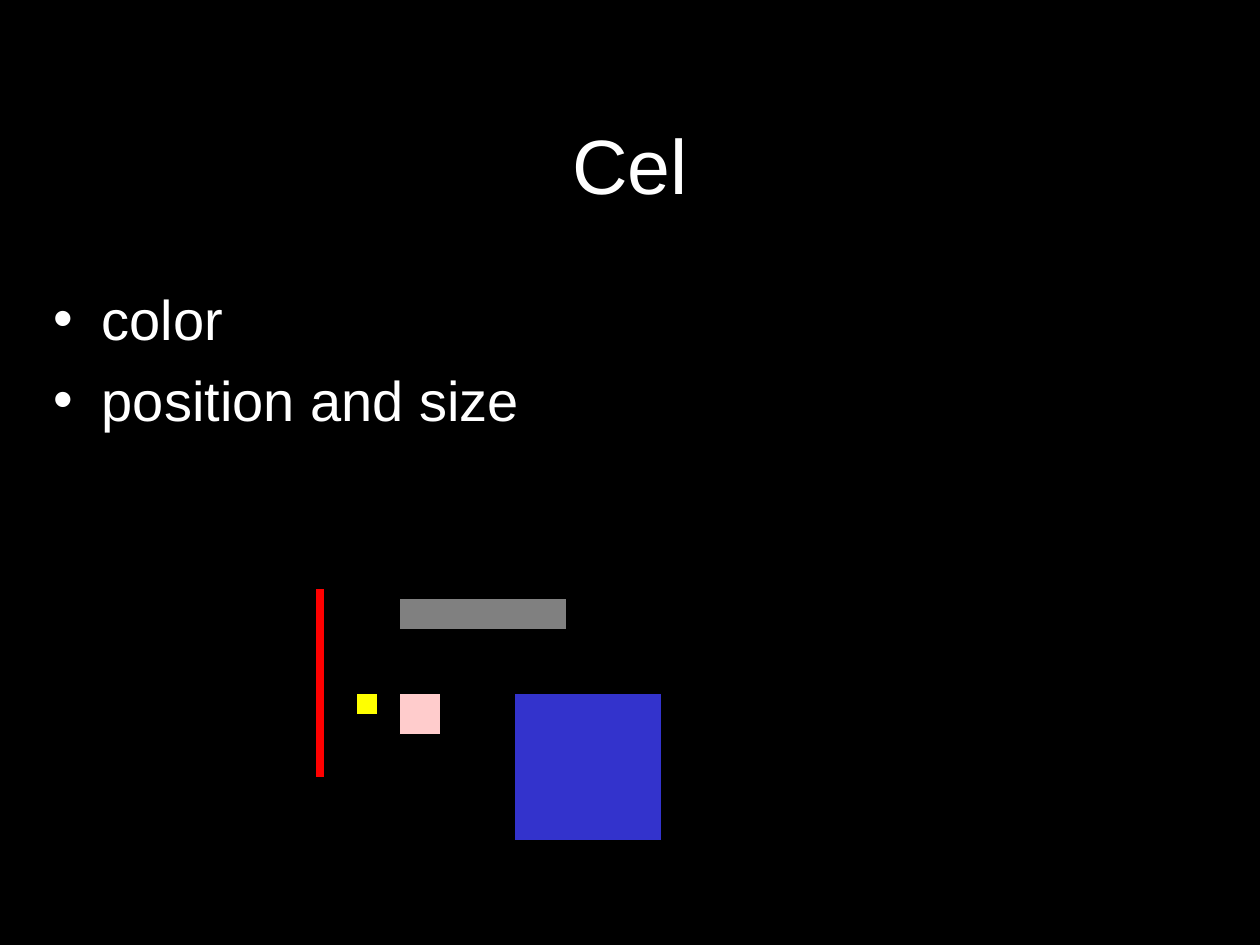
from dataclasses import dataclass

from lxml import etree
from pptx import Presentation
from pptx import util as u
from pptx.dml.color import RGBColor
from pptx.enum import shapes, text
from pptx.oxml.ns import qn


@dataclass(frozen=True)
class Theme:
    font: str = "Arial"
    background: str = "000000"
    ink: str = "FFFFFF"
    outline: str = "000000"
    red: str = "FF0000"
    gray: str = "808080"
    yellow: str = "FFFF00"
    pink: str = "FFCCCC"
    blue: str = "3333CC"
    title_size: int = 44
    body_size: int = 32
    bullet_gap: float = 7.6
    outline_width: float = 0.75


class SlideBuilder:
    def __init__(self, slide, theme):
        self.slide = slide
        self.theme = theme
        fill = slide.background.fill
        fill.solid()
        fill.fore_color.rgb = RGBColor.from_string(theme.background)

    def _text_frame(self, box):
        tf = self.slide.shapes.add_textbox(*map(u.Inches, box)).text_frame
        tf.word_wrap = True
        return tf

    def _style(self, p, size):
        for r in p.runs:
            r.font.name = self.theme.font
            r.font.size = u.Pt(size)
            r.font.color.rgb = RGBColor.from_string(self.theme.ink)

    def title(self, box, words):
        tf = self._text_frame(box)
        tf.vertical_anchor = text.MSO_ANCHOR.MIDDLE
        tf.text = words
        p = tf.paragraphs[0]
        p.alignment = text.PP_ALIGN.CENTER
        self._style(p, self.theme.title_size)

    def bullets(self, box, items, indent=0.38):
        tf = self._text_frame(box)
        tf.margin_top = u.Inches(0.09)
        for i, item in enumerate(items):
            p = tf.add_paragraph() if i else tf.paragraphs[0]
            p.text = item
            if i:
                p.space_before = u.Pt(self.theme.bullet_gap)
            pPr = p._p.get_or_add_pPr()
            pPr.set("marL", str(u.Inches(indent)))
            pPr.set("indent", str(-u.Inches(indent)))
            etree.SubElement(pPr, qn("a:buFont")).set("typeface", self.theme.font)
            etree.SubElement(pPr, qn("a:buChar")).set("char", "•")
            self._style(p, self.theme.body_size)

    def cel(self, box, color):
        sp = self.slide.shapes.add_shape(
            shapes.MSO_SHAPE.RECTANGLE, *map(u.Inches, box))
        sp.shadow.inherit = False
        sp.fill.solid()
        sp.fill.fore_color.rgb = RGBColor.from_string(color)
        sp.line.color.rgb = RGBColor.from_string(self.theme.outline)
        sp.line.width = u.Pt(self.theme.outline_width)


def main():
    prs = Presentation()
    prs.slide_width, prs.slide_height = u.Inches(10), u.Inches(7.5)
    theme = Theme()
    s = SlideBuilder(prs.slides.add_slide(prs.slide_layouts[6]), theme)

    s.title((0.75, 0.67, 8.5, 1.25), "Cel")
    s.bullets((0.33, 2.17, 9.67, 4.5), ["color", "position and size"])

    s.cel((2.5, 4.67, 0.08, 1.5), theme.red)
    s.cel((3.17, 4.75, 1.33, 0.25), theme.gray)
    squares_top = 5.5
    for left, side, color in [
        (2.83, 0.17, theme.yellow),
        (3.17, 0.33, theme.pink),
        (4.08, 1.17, theme.blue),
    ]:
        s.cel((left, squares_top, side, side), color)

    prs.save("out.pptx")


if __name__ == "__main__":
    main()
